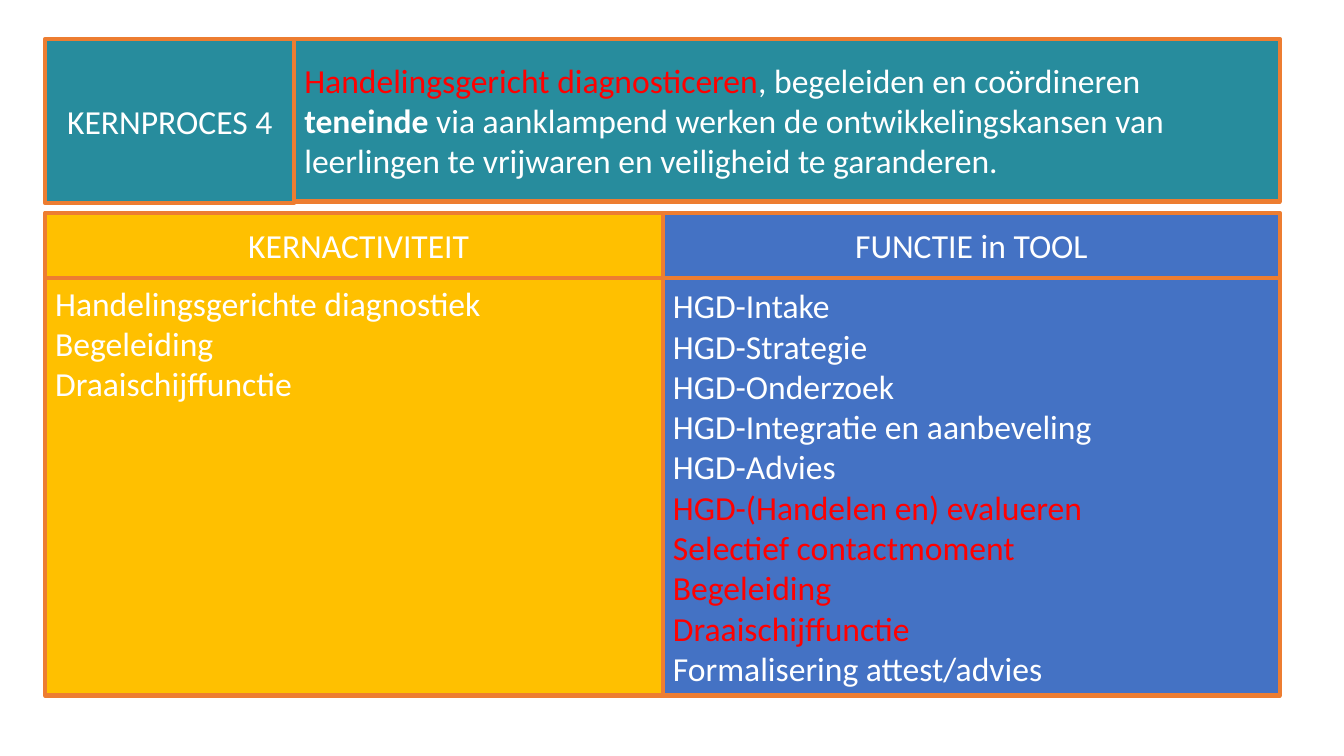
from pptx import Presentation
from pptx.dml.color import RGBColor
from pptx.enum.shapes import MSO_SHAPE
from pptx.enum.text import MSO_ANCHOR, PP_ALIGN
from pptx.util import Cm, Pt

# Content: a paragraph is a list of (text, colour, bold) spans
COLORS = {"teal": "278C9D", "yellow": "FFC000", "blue": "4472C4",
          "orange": "ED7D31", "white": "FFFFFF", "red": "FF0000"}

GOAL = [[
    ("Handelingsgericht diagnosticeren", "red", False),
    (", begeleiden en coördineren ", "white", False),
    ("teneinde", "white", True),
    (" via aanklampend werken de ontwikkelingskansen van leerlingen "
     "te vrijwaren en veiligheid te garanderen.", "white", False),
]]
ACTIVITIES = ["Handelingsgerichte diagnostiek", "Begeleiding", "Draaischijffunctie"]
FUNCTIONS = ["HGD-Intake", "HGD-Strategie", "HGD-Onderzoek",
             "HGD-Integratie en aanbeveling", "HGD-Advies",
             "HGD-(Handelen en) evalueren", "Selectief contactmoment",
             "Begeleiding", "Draaischijffunctie", "Formalisering attest/advies"]
RED_FUNCTIONS = FUNCTIONS[5:9]

# Edges of the blocks, in cm
LEFT, GOAL_LEFT, MIDDLE, RIGHT = 1.14, 7.42, 16.71, 32.25
TOP, HEADER_TOP, BODY_TOP, BOTTOM = 0.98, 5.36, 7, 17.53
PROCESS_BOTTOM, GOAL_BOTTOM = 5.12, 5.08


def rgb(name):
    return RGBColor.from_string(COLORS[name])


def lines(texts, red=()):
    return [[(text, "red" if text in red else "white", False)] for text in texts]


def add_block(page, paragraphs, edges, fill, align=PP_ALIGN.LEFT,
              anchor=MSO_ANCHOR.MIDDLE):
    left, top, right, bottom = edges
    box = page.shapes.add_shape(MSO_SHAPE.RECTANGLE, Cm(left), Cm(top),
                                Cm(right - left), Cm(bottom - top))
    box.shadow.inherit = False
    box.fill.solid()
    box.fill.fore_color.rgb = rgb(fill)
    box.line.color.rgb = rgb("orange")
    box.line.width = Pt(3)
    frame = box.text_frame
    frame.word_wrap = True
    frame.vertical_anchor = anchor
    for index, spans in enumerate(paragraphs):
        para = frame.add_paragraph() if index else frame.paragraphs[0]
        para.alignment = align
        for text, color, bold in spans:
            span = para.add_run()
            span.text = text
            span.font.name = "Calibri"
            span.font.size = Pt(24)
            span.font.bold = bold
            span.font.color.rgb = rgb(color)


def main():
    deck = Presentation()
    deck.slide_width, deck.slide_height = Cm(33.87), Cm(19.05)
    page = deck.slides.add_slide(deck.slide_layouts[6])

    # Headings
    add_block(page, lines(["KERNPROCES 4"]),
              (LEFT, TOP, GOAL_LEFT, PROCESS_BOTTOM), "teal", PP_ALIGN.CENTER)
    add_block(page, lines(["KERNACTIVITEIT"]),
              (LEFT, HEADER_TOP, MIDDLE + 0.23, BODY_TOP), "yellow", PP_ALIGN.CENTER)
    add_block(page, lines(["FUNCTIE in TOOL"]),
              (MIDDLE, HEADER_TOP, RIGHT, BODY_TOP), "blue", PP_ALIGN.CENTER)

    # Goal of the process and the two columns
    add_block(page, GOAL, (GOAL_LEFT, TOP, RIGHT, GOAL_BOTTOM), "teal")
    add_block(page, lines(ACTIVITIES), (LEFT, BODY_TOP, MIDDLE, BOTTOM), "yellow",
              anchor=MSO_ANCHOR.TOP)
    add_block(page, lines(FUNCTIONS, RED_FUNCTIONS),
              (MIDDLE, BODY_TOP, RIGHT, BOTTOM), "blue")

    deck.save("out.pptx")


if __name__ == "__main__":
    main()
